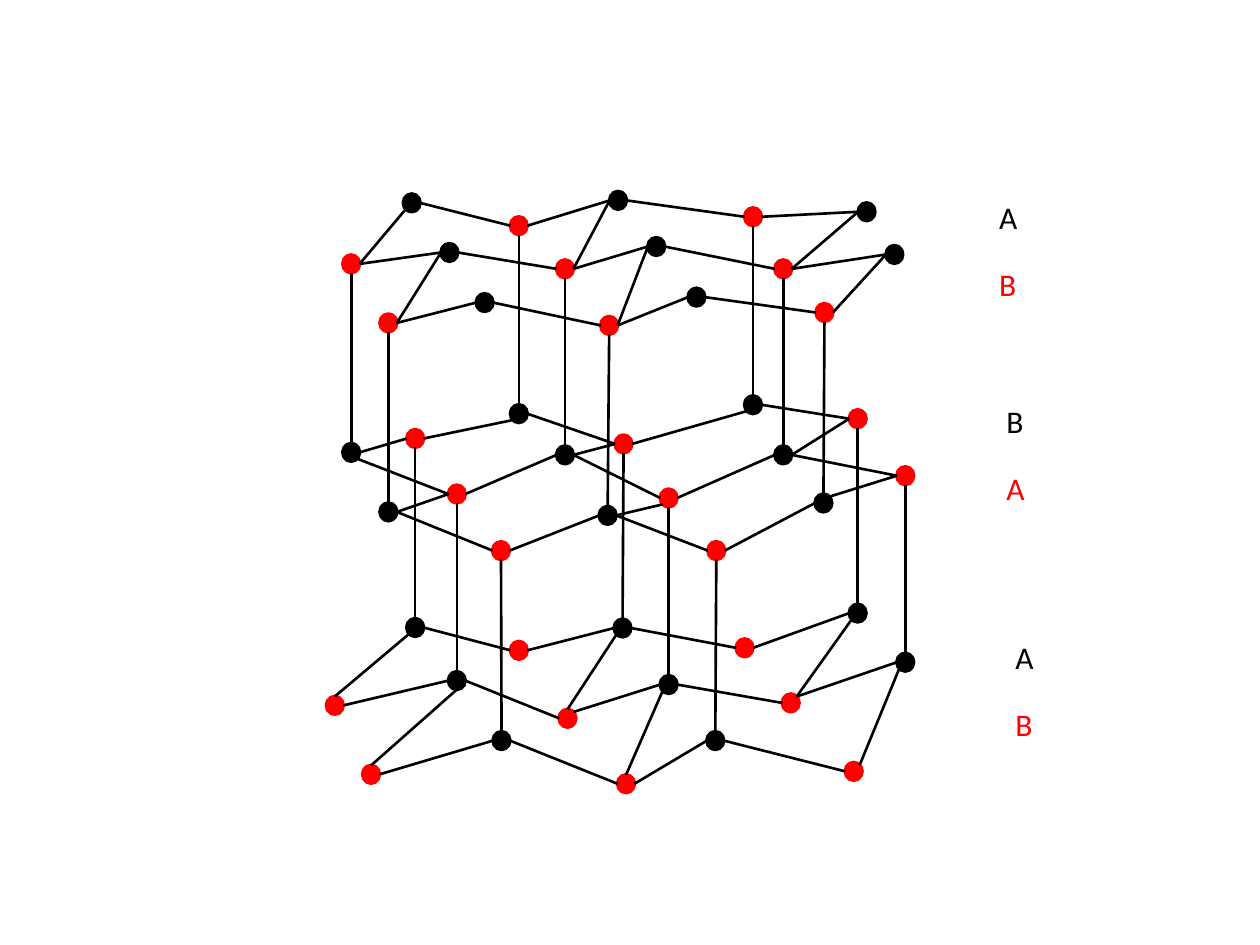
import itertools

import pptx
import pptx.dml.color
import pptx.enum.shapes
import pptx.enum.text
import pptx.oxml.ns
import pptx.util
from lxml import etree

Cm, Pt = pptx.util.Cm, pptx.util.Pt
BLACK, RED = "000000", "FF0000"
RADIUS_X, RADIUS_Y = 0.17, 0.18
DIAGONAL = 0.71
SITES = {
    "N": (0, -1), "S": (0, 1), "W": (-1, 0), "E": (1, 0),
    "NE": (DIAGONAL, -DIAGONAL), "SE": (DIAGONAL, DIAGONAL), "SW": (-DIAGONAL, DIAGONAL),
}
LABEL_STEP = 1.35
BACK, MIDDLE, FRONT = range(3)
SHEET_BONDS = [(BACK, MIDDLE, 0, 0), (BACK, MIDDLE, 2, 2), (BACK, MIDDLE, 4, 4),
               (MIDDLE, FRONT, 1, 0), (MIDDLE, FRONT, 3, 2), (MIDDLE, FRONT, 5, 4)]

LAYERS = [
    {
        "labels": "AB", "label_at": (19.89, 3.86),
        "first_colours": (BLACK, RED, RED),
        "rows": [
            [(8.3, 4.09), (10.46, 4.55), (12.46, 4.04), (15.18, 4.37), (17.47, 4.27)],
            [(7.08, 5.32), (9.06, 5.09), (11.39, 5.42), (13.23, 4.97), (15.79, 5.42), (18.03, 5.13)],
            [(7.83, 6.51), (9.77, 6.1), (12.28, 6.56), (14.04, 5.99), (16.62, 6.3)],
        ],
        "row_exceptions": {},
        "sheet_sites": ["SW E", "W E", "W E", "W E", "W E", "W E"],
    },
    {
        "labels": "BA", "label_at": (20.04, 7.98),
        "first_colours": (RED, BLACK, BLACK),
        "rows": [
            [(8.37, 8.84), (10.46, 8.34), (12.57, 8.95), (15.18, 8.16), (17.29, 8.44)],
            [(7.08, 9.12), (9.21, 9.96), (11.39, 9.17), (13.48, 10.04), (15.79, 9.17), (18.25, 9.59)],
            [(7.83, 10.32), (10.1, 11.1), (12.25, 10.39), (14.44, 11.1), (16.6, 10.14)],
        ],
        "row_exceptions": {(BACK, 0): "E SW", (BACK, 2): "E SW", (MIDDLE, 0): "SE W"},
        "sheet_sites": ["W E", "W E", "W E", "W E", "SW E", "W NE"],
    },
    {
        "labels": "AB", "label_at": (20.22, 12.73),
        "first_colours": (BLACK, RED, RED),
        "rows": [
            [(8.37, 12.65), (10.46, 13.11), (12.55, 12.66), (15.01, 13.06), (17.29, 12.36)],
            [(6.75, 14.22), (9.21, 13.72), (11.44, 14.48), (13.48, 13.8), (15.94, 14.17), (18.25, 13.35)],
            [(7.48, 15.61), (10.11, 14.93), (12.62, 15.8), (14.42, 14.93), (17.21, 15.55)],
        ],
        "row_exceptions": {(MIDDLE, 2): "NE W", (MIDDLE, 4): "NE W"},
        "sheet_sites": ["SW N", "SW N", "SW NE", "S N", "SW N", "SW NE"],
    },
]


def colour(value):
    return pptx.dml.color.RGBColor.from_string(value)


def atom_colour(layer, row, index):
    first = layer["first_colours"][row]
    other = RED if first == BLACK else BLACK
    return other if index % 2 else first


def add_atom(page, centre, fill):
    x, y = centre
    atom = page.shapes.add_shape(
        pptx.enum.shapes.MSO_SHAPE.OVAL,
        Cm(x - RADIUS_X), Cm(y - RADIUS_Y), Cm(2 * RADIUS_X), Cm(2 * RADIUS_Y))
    atom.shadow.inherit = False
    atom.fill.solid()
    atom.fill.fore_color.rgb = colour(fill)
    atom.line.color.rgb = colour(fill)
    atom.line.width = Pt(2)


def site_point(centre, site):
    across, down = SITES[site]
    return Cm(centre[0] + across * RADIUS_X), Cm(centre[1] + down * RADIUS_Y)


def add_bond(page, start, end, sites):
    start_site, end_site = sites.split()
    bond = page.shapes.add_connector(
        pptx.enum.shapes.MSO_CONNECTOR.STRAIGHT,
        *site_point(start, start_site), *site_point(end, end_site))
    bond.line.color.rgb = colour(BLACK)
    bond.line.width = Pt(1.5)
    etree.SubElement(bond._element.spPr, pptx.oxml.ns.qn("a:effectLst"))


def add_text(page, text, left, top, width, height=1.03, size=18, font="Calibri", fill=BLACK):
    box = page.shapes.add_textbox(Cm(left), Cm(top), Cm(width), Cm(height))
    frame = box.text_frame
    frame.word_wrap = True
    frame.auto_size = pptx.enum.text.MSO_AUTO_SIZE.SHAPE_TO_FIT_TEXT
    span = frame.paragraphs[0].add_run()
    span.text = text
    span.font.size = Pt(size)
    span.font.name = font
    span.font.color.rgb = colour(fill)


def draw_layer(page, layer):
    rows = layer["rows"]
    for row, centres in enumerate(rows):
        for index, centre in enumerate(centres):
            add_atom(page, centre, atom_colour(layer, row, index))
        for index, (start, end) in enumerate(itertools.pairwise(centres)):
            add_bond(page, start, end, layer["row_exceptions"].get((row, index), "E W"))
    for (upper, lower, i, j), sites in zip(SHEET_BONDS, layer["sheet_sites"]):
        add_bond(page, rows[upper][i], rows[lower][j], sites)


def join_layers(page, upper, lower):
    for row, centres in enumerate(upper["rows"]):
        for index, centre in enumerate(centres):
            if atom_colour(upper, row, index) == RED:
                add_bond(page, centre, lower["rows"][row][index], "S N")


def label_layer(page, layer):
    left, top = layer["label_at"]
    black_letter, red_letter = layer["labels"]
    add_text(page, black_letter, left, top, 1.47)
    add_text(page, red_letter, left, top + LABEL_STEP, 1.7, fill=RED)


def main():
    deck = pptx.Presentation()
    deck.slide_width, deck.slide_height = Cm(25.4), Cm(19.05)
    page = deck.slides.add_slide(deck.slide_layouts[6])
    for layer in LAYERS:
        draw_layer(page, layer)
    for upper, lower in itertools.pairwise(LAYERS):
        join_layers(page, upper, lower)
    for layer in LAYERS:
        label_layer(page, layer)
    deck.save("out.pptx")


if __name__ == "__main__":
    main()
